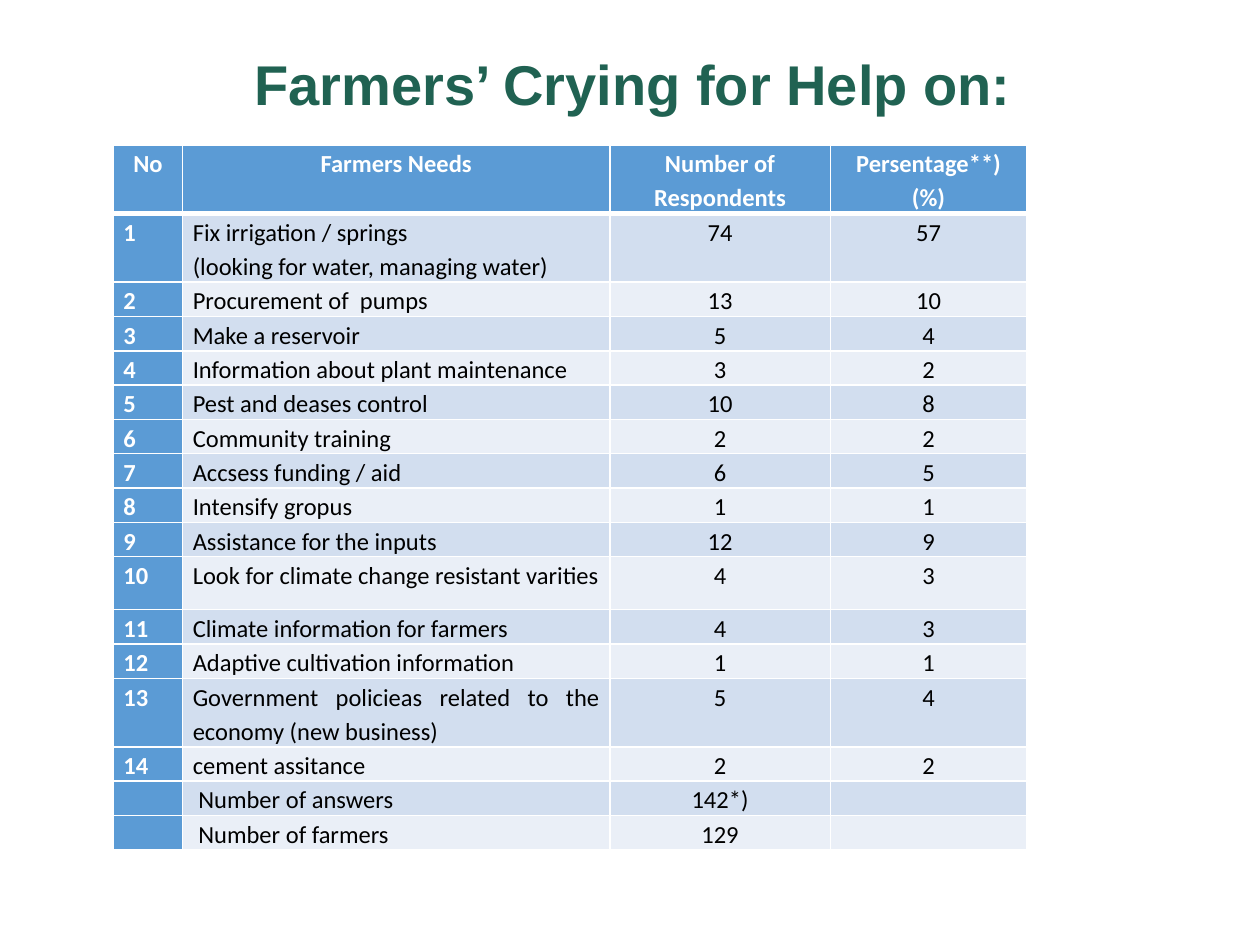
import pptx
import pptx.util
import pptx.dml.color
import pptx.enum.text
import pptx.oxml.ns
from lxml import etree

Inches = pptx.util.Inches
Pt = pptx.util.Pt
Align = pptx.enum.text.PP_ALIGN
qn = pptx.oxml.ns.qn

TITLE = "Farmers’ Crying for Help on:"
HEAD = ("No", "Farmers Needs", "Number of Respondents", "Persentage**)\n(%)")
NEEDS = [
    ("Fix irrigation / springs\n(looking for water, managing water)", 74, 57),
    ("Procurement of  pumps", 13, 10),
    ("Make a reservoir", 5, 4),
    ("Information about plant maintenance", 3, 2),
    ("Pest and deases control", 10, 8),
    ("Community training", 2, 2),
    ("Accsess funding / aid", 6, 5),
    ("Intensify gropus", 1, 1),
    ("Assistance for the inputs", 12, 9),
    ("Look for climate change resistant varities", 4, 3),
    ("Climate information for farmers", 4, 3),
    ("Adaptive cultivation information", 1, 1),
    ("Government policieas related to the economy (new business)", 5, 4),
    ("cement assitance", 2, 2),
]
TOTALS = [("", " Number of answers", "142*)", ""),
          ("", " Number of farmers", "129", "")]
WIDTHS = (0.55, 3.39, 1.75, 1.56)
LINE = 0.27
TALL = {0: 0.54, 1: 0.54, 10: 0.42, 13: 0.54}
BLUE, BANDS = "5B9BD5", ("EAEFF7", "D2DEEF")
WHITE, BLACK, GREEN = "FFFFFF", "000000", "206252"


def color(code):
    return pptx.dml.color.RGBColor.from_string(code)


def style(font, face, size, code, bold):
    font.name, font.size, font.bold = face, Pt(size), bold
    font.color.rgb = color(code)


def border(cell, side, width):
    line = etree.SubElement(cell._tc.get_or_add_tcPr(), qn("a:ln" + side),
                            w=str(Pt(width)))
    fill = etree.SubElement(line, qn("a:solidFill"))
    etree.SubElement(fill, qn("a:srgbClr"), val=WHITE)


def fill_cell(cell, text, row, col):
    key = row == 0 or col == 0
    cell.margin_left = cell.margin_right = Inches(0.08)
    cell.margin_top = cell.margin_bottom = 0
    for side in "LRTB":
        thick = (row, side) in ((0, "B"), (1, "T"))
        border(cell, side, 3 if thick else 1)
    cell.fill.solid()
    cell.fill.fore_color.rgb = color(BLUE if key else BANDS[row % 2])
    cell.text_frame.text = text
    for para in cell.text_frame.paragraphs:
        para.line_spacing = 1.15
        para.alignment = Align.CENTER if row == 0 or col > 1 else Align.JUSTIFY
        for run in para.runs:
            style(run.font, "Calibri", 14, WHITE if key else BLACK, key)
        if not text:
            etree.SubElement(para._p, qn("a:endParaRPr"), sz="1400")


def main():
    deck = pptx.Presentation()
    deck.slide_width, deck.slide_height = Inches(10), Inches(7.5)
    slide = deck.slides.add_slide(deck.slide_layouts[5])

    title = slide.shapes.title
    title.left, title.top = Inches(0.9), Inches(0.05)
    title.width, title.height = Inches(8.25), Inches(0.93)
    frame = title.text_frame
    frame.text = TITLE
    frame.vertical_anchor = pptx.enum.text.MSO_ANCHOR.BOTTOM
    frame.paragraphs[0].alignment = Align.CENTER
    style(frame.paragraphs[0].runs[0].font, "Arial", 32, GREEN, True)

    rows = [HEAD, *((n, *need) for n, need in enumerate(NEEDS, 1)), *TOTALS]
    highs = [TALL.get(i, LINE) for i in range(len(rows))]
    table = slide.shapes.add_table(
        len(rows), len(HEAD), Inches(0.9), Inches(1.15),
        Inches(sum(WIDTHS)), Inches(sum(highs))).table
    for col, width in zip(table.columns, WIDTHS):
        col.width = Inches(width)
    for i, (row, high) in enumerate(zip(rows, highs)):
        table.rows[i].height = Inches(high)
        for j, value in enumerate(row):
            fill_cell(table.cell(i, j), str(value), i, j)

    deck.save("out.pptx")


if __name__ == "__main__":
    main()
